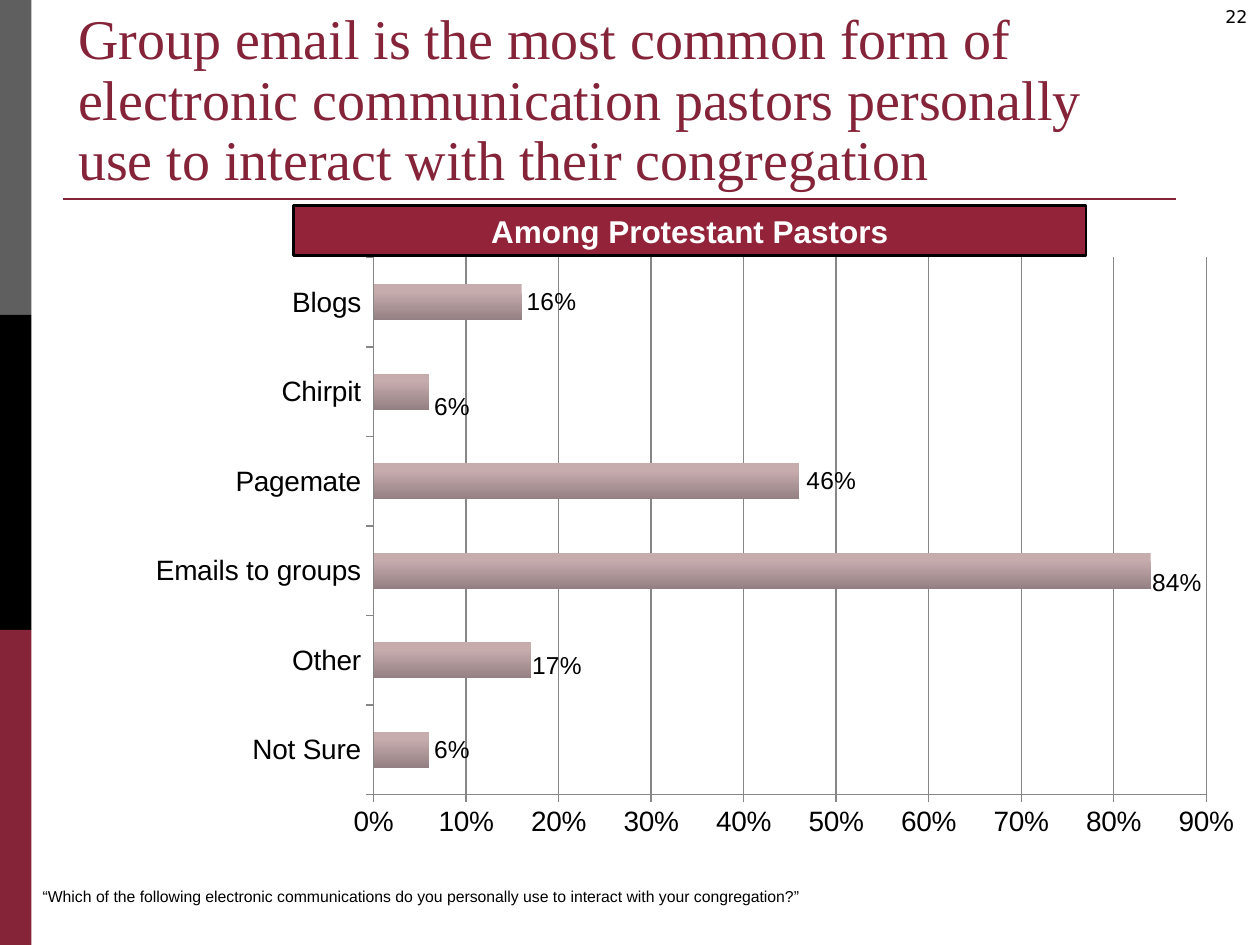
import pptx
import pptx.chart.data
import pptx.dml.color
import pptx.enum.chart
import pptx.enum.shapes
import pptx.enum.text
import pptx.oxml
import pptx.oxml.ns
import pptx.util
from pptx.util import Inches, Pt

# Content
TITLE = ("Group email is the most common form of electronic communication "
         "pastors personally use to interact with their congregation")
BANNER = "Among Protestant Pastors"
QUESTION = ("“Which of the following electronic communications do you personally "
            "use to interact with your congregation?”")
PAGE = "22"
RESULTS = [("Not Sure", 0.06), ("Other", 0.17), ("Emails to groups", 0.84),
           ("Pagemate", 0.46), ("Chirpit", 0.06), ("Blogs", 0.16)]
# Label shifts as fractions of the chart size, by point index
LABEL_SHIFTS = {1: (-0.003, 0.01), 2: (-0.003, 0.02), 3: (0.002, 0), 4: (0, 0.025)}
PLOT_AREA = {"x": 0.274, "y": 0.017, "w": 0.682, "h": 0.87}

COLORS = {"maroon": "852338", "banner": "922339", "gray": "5F5F5F", "black": "000000",
          "white": "FFFFFF", "bar_top": "C7ACAE", "bar_bottom": "948082", "grid": "868686"}
ALIGN = pptx.enum.text.PP_ALIGN
ANCHOR = pptx.enum.text.MSO_ANCHOR


def rgb(name):
    return pptx.dml.color.RGBColor.from_string(COLORS[name])


def style_font(font, size, color="black", name="Arial", bold=False):
    font.size = Pt(size)
    font.name = name
    font.bold = bold
    font.color.rgb = rgb(color)


def write(shape, text, size, align=ALIGN.LEFT, anchor=ANCHOR.TOP, **font):
    frame = shape.text_frame
    frame.word_wrap = True
    frame.vertical_anchor = anchor
    paragraph = frame.paragraphs[0]
    paragraph.alignment = align
    run = paragraph.add_run()
    run.text = text
    style_font(run.font, size, **font)
    return paragraph


def add_box(shapes, left, top, width, height, fill):
    shape = shapes.add_shape(pptx.enum.shapes.MSO_SHAPE.RECTANGLE, Inches(left),
                             Inches(top), Inches(width), Inches(height))
    shape.shadow.inherit = False
    shape.fill.solid()
    shape.fill.fore_color.rgb = rgb(fill)
    shape.line.fill.background()
    return shape


def add_text(shapes, left, top, width, height, text, size, **options):
    box = shapes.add_textbox(Inches(left), Inches(top), Inches(width), Inches(height))
    return write(box, text, size, **options)


def manual_layout(values, inner=False):
    namespace = pptx.oxml.ns.nsdecls("c")
    modes = '<c:layoutTarget val="inner"/><c:xMode val="edge"/><c:yMode val="edge"/>' if inner else ""
    parts = "".join(f'<c:{key} val="{value}"/>' for key, value in values.items())
    return pptx.oxml.parse_xml(f"<c:layout {namespace}><c:manualLayout>{modes}{parts}"
                               "</c:manualLayout></c:layout>")


def add_results_chart(shapes):
    data = pptx.chart.data.CategoryChartData(number_format="0%")
    data.categories = [category for category, _ in RESULTS]
    data.add_series("Series 1", [value for _, value in RESULTS])
    chart = shapes.add_chart(pptx.enum.chart.XL_CHART_TYPE.BAR_CLUSTERED, Inches(0.31),
                             Inches(1.96), Inches(9.69), Inches(4.9), data).chart
    chart.has_legend = False
    chart.has_title = False
    style_font(chart.font, 18)

    # Axes
    for axis in (chart.category_axis, chart.value_axis):
        style_font(axis.tick_labels.font, 16)
        axis.major_tick_mark = pptx.enum.chart.XL_TICK_MARK.OUTSIDE
        axis.format.line.color.rgb = rgb("grid")
    axis = chart.value_axis
    axis.minimum_scale, axis.maximum_scale, axis.major_unit = 0, 0.9, 0.1
    axis.has_major_gridlines = True
    axis.major_gridlines.format.line.color.rgb = rgb("grid")
    axis.tick_labels.number_format = "0%"
    axis.tick_labels.number_format_is_linked = False

    # Bars
    plot = chart.plots[0]
    plot.gap_width = 150
    plot.vary_by_categories = False
    series = plot.series[0]
    fill = series.format.fill
    fill.gradient()
    fill.gradient_angle = 270
    for stop, color, position in zip(fill.gradient_stops, ("bar_top", "bar_bottom"), (0.2, 1)):
        stop.color.rgb = rgb(color)
        stop.position = position

    # Value labels
    outside = pptx.enum.chart.XL_LABEL_POSITION.OUTSIDE_END
    labels = series.data_labels
    labels.show_value = True
    labels.number_format = "0%"
    labels.number_format_is_linked = False
    labels.position = outside
    style_font(labels.font, 14)
    for index in LABEL_SHIFTS:
        label = series.points[index].data_label
        style_font(label.font, 14)
        label.position = outside
    chart_xml = chart.element if hasattr(chart, "element") else chart._chartSpace
    for label_xml, (x, y) in zip(chart_xml.xpath(".//c:dLbl"), LABEL_SHIFTS.values()):
        label_xml.insert(1, manual_layout({"x": x, "y": y}))

    # Plot position
    plot_area = chart_xml.xpath(".//c:plotArea")[0]
    for layout in plot_area.xpath("c:layout"):
        plot_area.remove(layout)
    plot_area.insert(0, manual_layout(PLOT_AREA, inner=True))


def main():
    presentation = pptx.Presentation()
    presentation.slide_width, presentation.slide_height = Inches(10), Inches(7.5)
    slide = presentation.slides.add_slide(presentation.slide_layouts[5])
    shapes = slide.shapes

    # Side bands and rule under the title
    for row, color in enumerate(("gray", "black", "maroon")):
        add_box(shapes, 0, row * 2.5, 0.25, 2.5, color)
    rule = shapes.add_connector(pptx.enum.shapes.MSO_CONNECTOR.STRAIGHT, Inches(0.5),
                                Inches(1.58), Inches(9.33), Inches(1.58))
    rule.line.color.rgb = rgb("maroon")
    rule.line.width = Pt(1.5)
    rule._element.spPr.append(
        pptx.oxml.parse_xml(f'<a:effectLst {pptx.oxml.ns.nsdecls("a")}/>'))

    # Page number
    add_text(shapes, 9.5, 0, 0.5, 0.33, PAGE, 10, align=ALIGN.RIGHT, name="DejaVu Sans")

    add_results_chart(shapes)

    # Title
    title = shapes.title
    title.left, title.top = Inches(0.52), Inches(0)
    title.width, title.height = Inches(8.79), Inches(1.58)
    title.text_frame.auto_size = pptx.enum.text.MSO_AUTO_SIZE.NONE
    paragraph = write(title, TITLE, 32, anchor=ANCHOR.BOTTOM, color="maroon",
                      name="Times New Roman")
    paragraph.line_spacing = 0.9

    # Survey question and banner
    add_text(shapes, 0.24, 6.99, 7.66, 0.25, QUESTION, 9)
    banner = add_box(shapes, 2.33, 1.63, 6.29, 0.4, "banner")
    banner.line.color.rgb = rgb("black")
    banner.line.width = Pt(1.5)
    write(banner, BANNER, 18, align=ALIGN.CENTER, anchor=ANCHOR.MIDDLE, color="white", bold=True)

    presentation.save("out.pptx")


if __name__ == "__main__":
    main()
